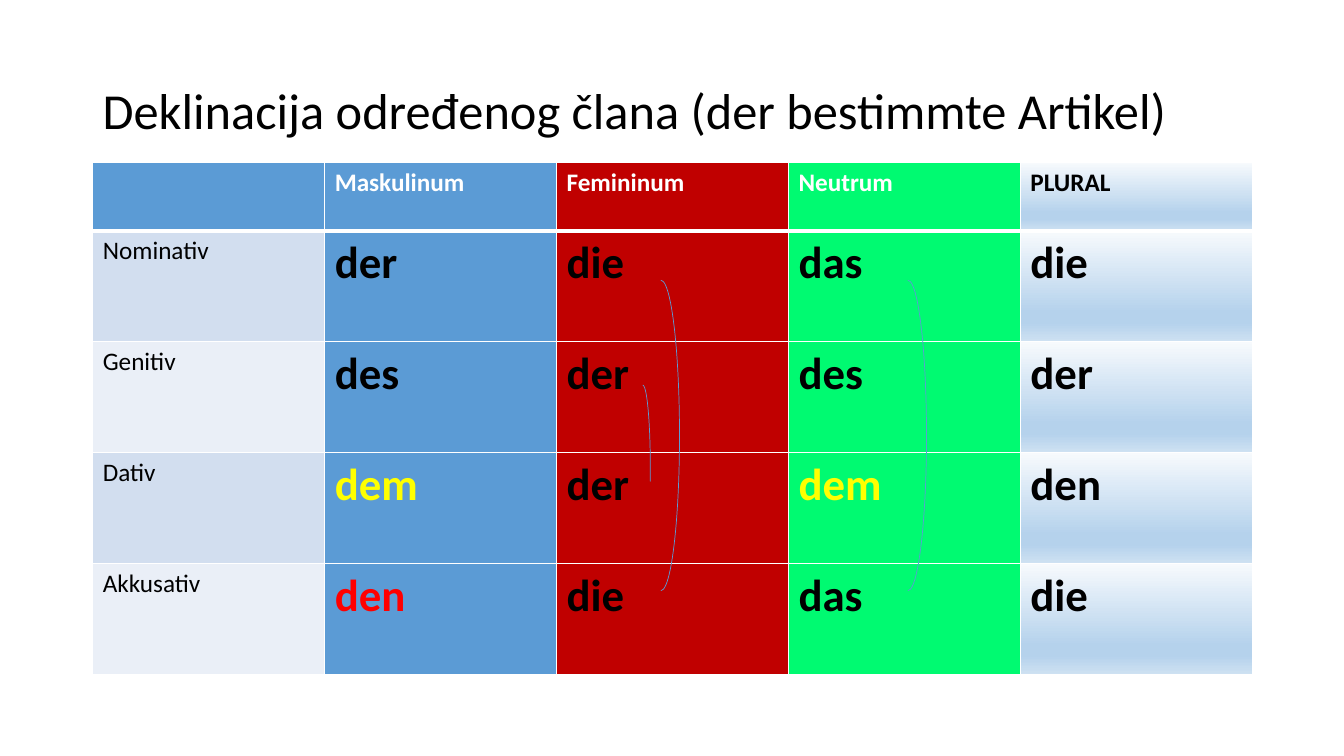
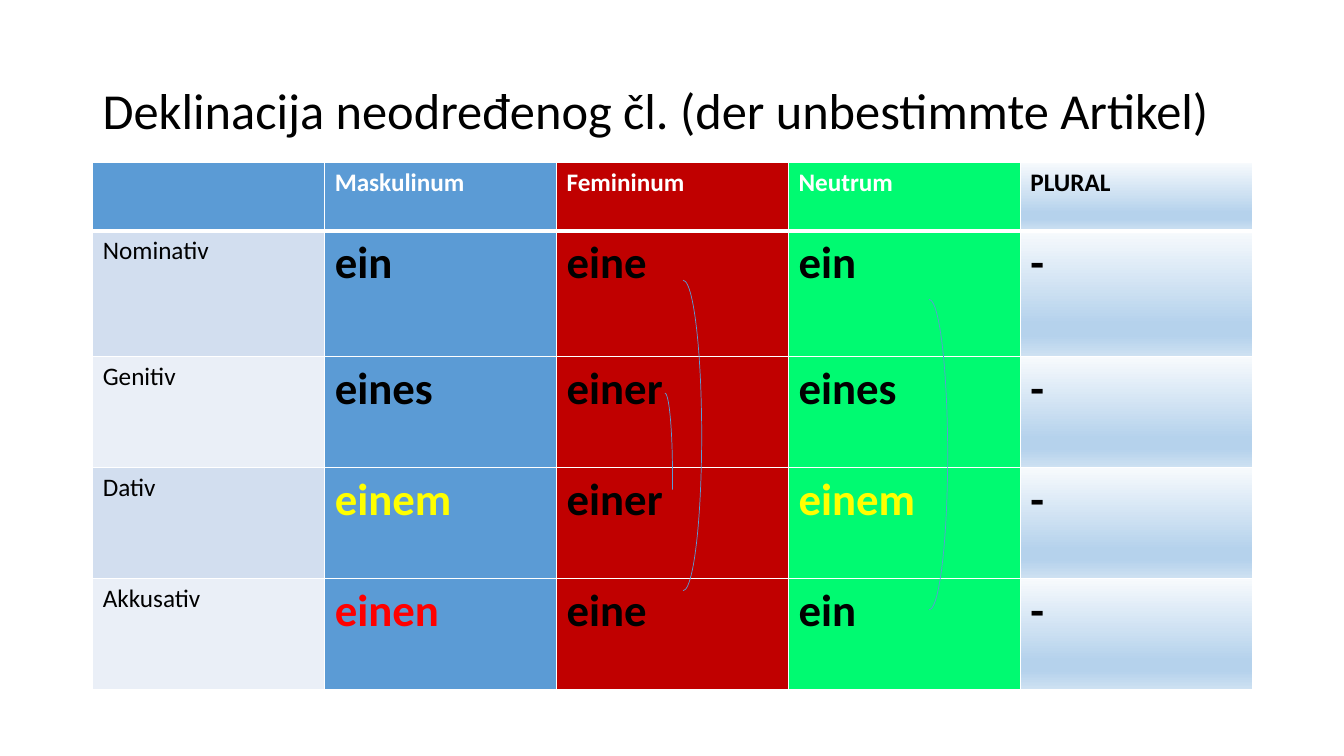
from dataclasses import dataclass

from pptx import Presentation
from pptx.dml.color import RGBColor
from pptx.enum.shapes import MSO_SHAPE
from pptx.enum.text import MSO_ANCHOR
from pptx.oxml import parse_xml
from pptx.oxml.ns import nsdecls
from pptx.util import Pt

SCALE = 9144  # EMU in one px, 100 px to the inch
FONT = "Calibri"
BLACK, WHITE, YELLOW, RED = "000000", "FFFFFF", "FFFF00", "FF0000"
BLUE, CRIMSON, GREEN = "5B9BD5", "C00000", "00FA71"
BANDS = ("D2DEEF", "EAEFF7")
FADE = ((0, "F7FAFD"), (74, "B5D2EC"), (83, "B5D2EC"), (100, "CEE1F2"))

LEFT, WIDTH, TOP = 92, 1150, 161
HEADS = ("", "Maskulinum", "Femininum", "Neutrum", "PLURAL")
CASES = ("Nominativ", "Genitiv", "Dativ", "Akkusativ")
FILLS = (BLUE, BLUE, CRIMSON, GREEN, FADE)
TINTS = {(3, 1): YELLOW, (3, 3): YELLOW, (4, 1): RED}  # (row, column)


@dataclass
class Arc:
    x: int
    y: int
    w: int = 37
    h: int = 308
    end: float = 53.99


@dataclass
class Page:
    title: str
    rows: tuple[int, ...]
    forms: tuple[str, ...]  # one string of four words per case
    arcs: tuple[Arc, ...]


PAGES = (
    Page("Deklinacija određenog člana (der bestimmte Artikel)",
         (68, 110, 110, 110, 110),
         ("der die das die", "des der des der", "dem der dem den", "den die das die"),
         (Arc(882, 278), Arc(637, 278), Arc(630, 382, 15, 163, 37.52))),
    Page("Deklinacija neodređenog čl. (der unbestimmte Artikel)",
         (68, 125, 110, 110, 110),
         ("ein eine ein -", "eines einer eines -", "einem einer einem -", "einen eine ein -"),
         (Arc(903, 297), Arc(659, 278), Arc(652, 390, 15, 163, 37.52))),
)


def px(num: int) -> int:
    return num * SCALE


def color(code: str) -> RGBColor:
    return RGBColor.from_string(code)


def put(frame, text: str, size: int = 18, tint: str = BLACK,
        bold: bool = False, space: float = 1.0) -> None:
    para = frame.paragraphs[0]
    para.line_spacing = space
    run = para.add_run()
    run.text = text
    font = run.font
    font.name, font.size, font.bold = FONT, Pt(size), bold
    font.color.rgb = color(tint)


def edge(cell, row: int) -> None:
    """Draw white cell borders, thicker below the header."""
    props = cell._tc.get_or_add_tcPr()
    wide = {"T": 3 if row == 1 else 1, "B": 3 if row == 0 else 1}
    for side in "LRTB":
        props.append(parse_xml(
            f'<a:ln{side} {nsdecls("a")} w="{Pt(wide.get(side, 1))}"><a:solidFill>'
            f'<a:srgbClr val="{WHITE}"/></a:solidFill></a:ln{side}>'))


def paint(cell, fill: str | tuple) -> None:
    """Fill a cell with one colour or with gradient stops."""
    if isinstance(fill, str):
        cell.fill.solid()
        cell.fill.fore_color.rgb = color(fill)
        return
    stops = "".join(f'<a:gs pos="{pos * 1000}"><a:srgbClr val="{code}"/></a:gs>'
                    for pos, code in fill)
    cell._tc.get_or_add_tcPr().append(parse_xml(
        f'<a:gradFill {nsdecls("a")}><a:gsLst>{stops}</a:gsLst>'
        '<a:lin ang="5400000" scaled="0"/></a:gradFill>'))


def add_title(slide, text: str) -> None:
    box = slide.shapes.add_textbox(px(LEFT), px(40), px(WIDTH), px(145))
    frame = box.text_frame
    frame.word_wrap = True
    frame.vertical_anchor = MSO_ANCHOR.MIDDLE
    put(frame, text, size=36, space=0.9)


def add_grid(slide, page: Page) -> None:
    cols = len(HEADS)
    table = slide.shapes.add_table(len(page.rows), cols, px(LEFT), px(TOP),
                                   px(WIDTH), px(sum(page.rows))).table
    for col in table.columns:
        col.width = px(WIDTH // cols)
    for row, high in zip(table.rows, page.rows):
        row.height = px(high)
    lines = [HEADS] + [(case, *form.split()) for case, form in zip(CASES, page.forms)]
    for i, line in enumerate(lines):
        for j, word in enumerate(line):
            cell = table.cell(i, j)
            edge(cell, i)
            paint(cell, BANDS[(i - 1) % 2] if i and not j else FILLS[j])
            if not word:
                continue
            if i == 0:
                style = dict(bold=True, tint=BLACK if j == cols - 1 else WHITE)
            elif j == 0:
                style = {}
            else:
                style = dict(size=32, bold=True, tint=TINTS.get((i, j), BLACK))
            put(cell.text_frame, word, **style)


def add_arc(slide, arc: Arc) -> None:
    shape = slide.shapes.add_shape(MSO_SHAPE.ARC, px(arc.x), px(arc.y), px(arc.w), px(arc.h))
    shape.adjustments[0] = 162
    shape.adjustments[1] = arc.end
    shape.shadow.inherit = False
    shape.fill.background()
    shape.line.color.rgb = color(BLUE)
    shape.line.width = Pt(0.5)


def main() -> None:
    deck = Presentation()
    deck.slide_width, deck.slide_height = px(1333), px(750)
    for page in PAGES:
        slide = deck.slides.add_slide(deck.slide_layouts[6])
        add_title(slide, page.title)
        add_grid(slide, page)
        # Arcs link equal forms
        for arc in page.arcs:
            add_arc(slide, arc)
    deck.save("out.pptx")


if __name__ == "__main__":
    main()
